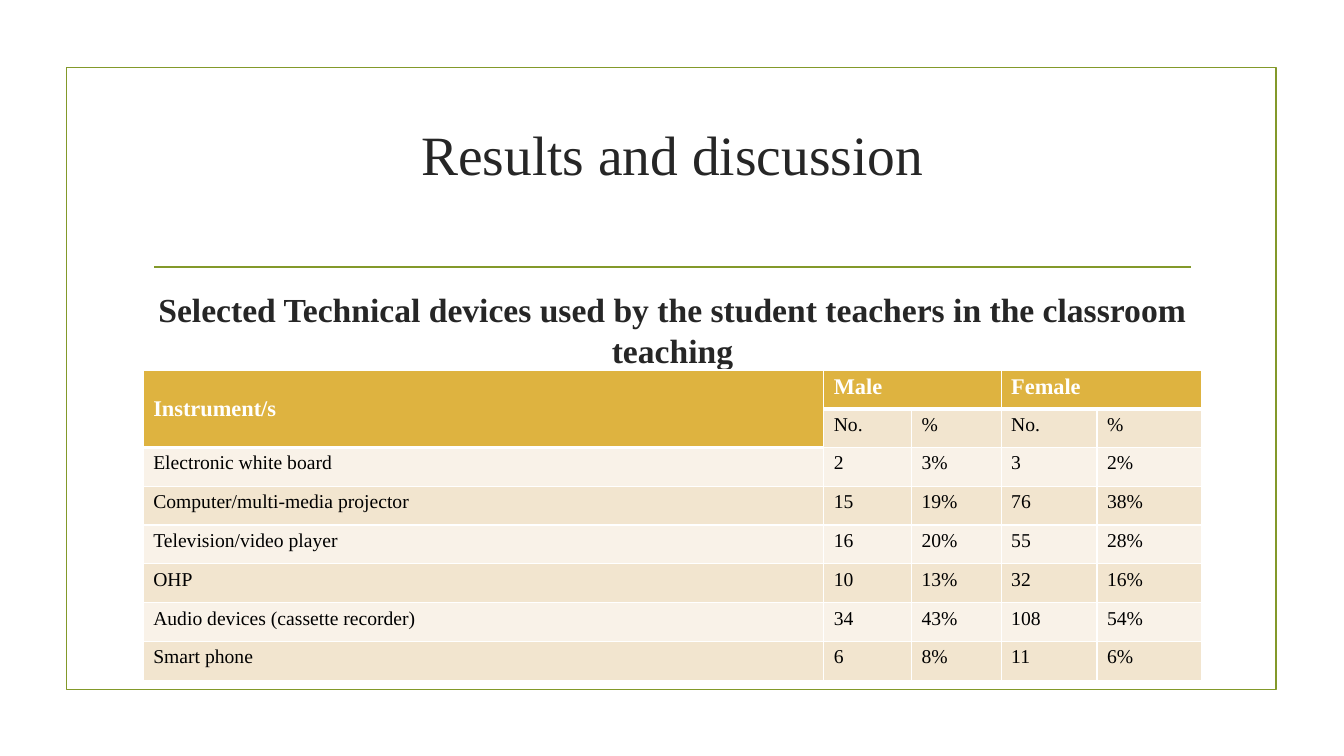
from lxml.etree import SubElement
from pptx import Presentation
from pptx.dml.color import RGBColor
from pptx.enum.shapes import MSO_CONNECTOR, MSO_SHAPE
from pptx.enum.text import MSO_ANCHOR, PP_ALIGN
from pptx.oxml.ns import qn
from pptx.util import Inches, Pt

WIDTHS = [6.75, 0.87, 0.89, 0.95, 1.04]
ROWS = [
    ["Instrument/s", "Male", "", "Female", ""],
    ["", "No.", "%", "No.", "%"],
    ["Electronic white board", "2", "3%", "3", "2%"],
    ["Computer/multi-media projector", "15", "19%", "76", "38%"],
    ["Television/video player", "16", "20%", "55", "28%"],
    ["OHP", "10", "13%", "32", "16%"],
    ["Audio devices (cassette recorder)", "34", "43%", "108", "54%"],
    ["Smart phone", "6", "8%", "11", "6%"],
]
MERGES = [((0, 0), (1, 0)), ((0, 1), (0, 2)), ((0, 3), (0, 4))]


def color(code):
    return RGBColor.from_string(code)


class Deck:
    font = "Times New Roman"
    ink, green, gold, white = "262626", "83992A", "DEB340", "FFFFFF"
    bands = ["F9F2E8", "F2E5CF"]

    def __init__(self):
        self.prs = Presentation()
        self.prs.slide_width, self.prs.slide_height = Inches(13.33), Inches(7.5)
        self.slide = self.prs.slides.add_slide(self.prs.slide_layouts[5])
        self.shapes = self.slide.shapes

    def label(self, frame, text, size, code, bold=False, align=PP_ALIGN.LEFT):
        para = frame.paragraphs[0]
        para.alignment = align
        run = para.add_run()
        run.text = text
        font = run.font
        font.name, font.size, font.bold = self.font, Pt(size), bold
        font.color.rgb = color(code)

    def stroke(self, line):
        line.color.rgb = color(self.green)
        line.width = Pt(1.25)

    def frame(self, *box):
        rect = self.shapes.add_shape(MSO_SHAPE.RECTANGLE, *map(Inches, box))
        rect.shadow.inherit = False
        rect.fill.background()
        self.stroke(rect.line)

    def rule(self, *ends):
        line = self.shapes.add_connector(MSO_CONNECTOR.STRAIGHT, *map(Inches, ends))
        self.stroke(line.line)
        SubElement(line._element.spPr, qn("a:effectLst"))

    def title(self, text, *box):
        title = self.shapes.title
        title.left, title.top, title.width, title.height = map(Inches, box)
        frame = title.text_frame
        frame.word_wrap = True
        frame.vertical_anchor = MSO_ANCHOR.MIDDLE
        frame.margin_bottom = Inches(0.58)
        self.label(frame, text, 39.6, self.ink, align=PP_ALIGN.CENTER)

    def text(self, text, *box):
        frame = self.shapes.add_textbox(*map(Inches, box)).text_frame
        frame.word_wrap = True
        frame.margin_top = Inches(0.07)
        self.label(frame, text, 24, self.ink, True, PP_ALIGN.CENTER)

    def edge(self, cell, side, width):
        line = SubElement(cell._tc.get_or_add_tcPr(), qn("a:ln" + side), w=str(Pt(width)))
        fill = SubElement(line, qn("a:solidFill"))
        SubElement(fill, qn("a:srgbClr"), val=self.white)

    def table(self, rows, widths, merges, left, top, height):
        box = map(Inches, (left, top, sum(widths), height))
        table = self.shapes.add_table(len(rows), len(widths), *box).table
        for col, width in zip(table.columns, widths):
            col.width = Inches(width)
        for row in table.rows:
            row.height = Inches(height / len(rows))
        for start, end in merges:
            table.cell(*start).merge(table.cell(*end))
        for r, row in enumerate(rows):
            for c, text in enumerate(row):
                cell = table.cell(r, c)
                # The first column's heading is two rows deep
                last = 1 if c == 0 else 0
                head = r <= last
                for side in "LRTB":
                    thick = (side, r) in (("B", last), ("T", last + 1))
                    self.edge(cell, side, 3 if thick else 1)
                cell.fill.solid()
                cell.fill.fore_color.rgb = color(self.gold if head else self.bands[r % 2])
                if text:
                    self.label(cell.text_frame, text, 16 if head else 14,
                               self.white if head else "000000", head)
        table.cell(0, 0).vertical_anchor = MSO_ANCHOR.MIDDLE


def main():
    deck = Deck()
    # Border and rule
    deck.frame(0.66, 0.67, 12, 6.17)
    deck.rule(1.53, 2.65, 11.81, 2.65)
    # Headings
    deck.title("Results and discussion", 1.42, 1.07, 10.5, 1.43)
    deck.text("Selected Technical devices used by the student teachers "
              "in the classroom teaching", 1.42, 2.8, 10.5, 0.87)
    # Device use by gender
    deck.table(ROWS, WIDTHS, MERGES, 1.42, 3.67, 3.08)
    deck.prs.save("out.pptx")


if __name__ == "__main__":
    main()
